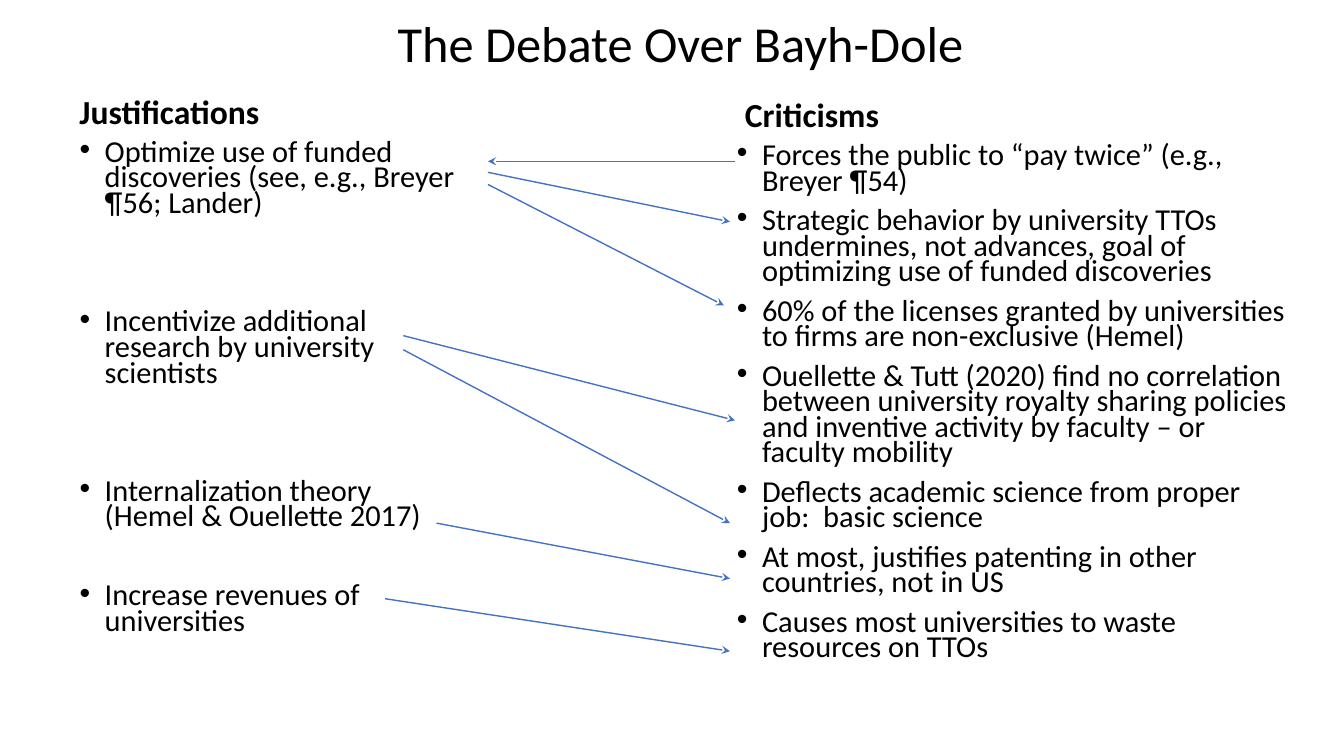
from lxml import etree
from pptx import Presentation
from pptx.dml.color import RGBColor
from pptx.enum.shapes import MSO_CONNECTOR
from pptx.enum.text import MSO_ANCHOR, PP_ALIGN
from pptx.oxml.ns import qn
from pptx.util import Inches, Pt

STRAIGHT = MSO_CONNECTOR.STRAIGHT
TOP, MIDDLE, BOTTOM = MSO_ANCHOR.TOP, MSO_ANCHOR.MIDDLE, MSO_ANCHOR.BOTTOM
LEFT, CENTER = PP_ALIGN.LEFT, PP_ALIGN.CENTER

COLORS = {"text": "000000", "arrow": "4472C4"}
FONT = "Calibri"
BULLET_SIZE = 21.7
BULLET_INDENT = 0.25
BULLET_GAP = 10
ROW_GAP = 28.2  # one line of bullet text plus its gap

# Each bullet: text, rows left open above it
JUSTIFICATIONS = [
    ("Optimize use of funded discoveries (see, e.g., Breyer ¶56; Lander)", 0),
    ("Incentivize additional research by university scientists", 2),
    ("Internalization theory (Hemel & Ouellette 2017)", 2),
    ("Increase revenues of universities", 1),
]
CRITICISMS = [
    ("Forces the public to “pay twice” (e.g., Breyer ¶54)", 0),
    ("Strategic behavior by university TTOs undermines, not advances, "
     "goal of optimizing use of funded discoveries", 0),
    ("60% of the licenses granted by universities to firms are "
     "non-exclusive (Hemel)", 0),
    ("Ouellette & Tutt (2020) find no correlation between university royalty "
     "sharing policies and inventive activity by faculty – or faculty mobility", 0),
    ("Deflects academic science from proper job:  basic science", 0),
    ("At most, justifies patenting in other countries, not in US", 0),
    ("Causes most universities to waste resources on TTOs", 0),
]

# Start x, start y, end x, end y
ARROWS = [
    (7.29, 1.6, 4.84, 1.6),
    (4, 3.33, 7.29, 4.17),
    (4.84, 1.83, 7.18, 3.03),
    (4, 3.47, 7.24, 5.19),
    (4.84, 1.71, 7.24, 2.2),
    (4.33, 5.19, 7.24, 5.74),
    (3.82, 5.94, 7.24, 6.46),
]


def add_box(page, place, anchor):
    box = page.shapes.add_textbox(*(Inches(length) for length in place))
    frame = box.text_frame
    frame.word_wrap = True
    frame.vertical_anchor = anchor
    return frame


def add_span(para, text, size, bold=False):
    span = para.add_run()
    span.text = text
    span.font.name = FONT
    span.font.size = Pt(size)
    span.font.bold = bold
    span.font.color.rgb = RGBColor.from_string(COLORS["text"])


def add_heading(page, place, text, size, anchor=BOTTOM, align=LEFT, bold=True):
    para = add_box(page, place, anchor).paragraphs[0]
    para.alignment = align
    para.line_spacing = 0.9
    add_span(para, text, size, bold)


def set_bullet(para):
    props = para._p.get_or_add_pPr()
    props.set("marL", str(Inches(BULLET_INDENT)))
    props.set("indent", str(-Inches(BULLET_INDENT)))
    etree.SubElement(props, qn("a:buFont")).set("typeface", "Arial")
    etree.SubElement(props, qn("a:buChar")).set("char", "•")


def add_bullets(page, place, bullets):
    frame = add_box(page, place, TOP)
    for index, (text, open_rows) in enumerate(bullets):
        para = frame.add_paragraph() if index else frame.paragraphs[0]
        set_bullet(para)
        para.line_spacing = 0.7
        if index:
            para.space_before = Pt(BULLET_GAP + open_rows * ROW_GAP)
        add_span(para, text, BULLET_SIZE)


def add_arrow(page, ends):
    arrow = page.shapes.add_connector(STRAIGHT, *(Inches(length) for length in ends))
    arrow.line.width = Pt(1)
    arrow.line.color.rgb = RGBColor.from_string(COLORS["arrow"])
    etree.SubElement(arrow.line._get_or_add_ln(), qn("a:tailEnd")).set("type", "stealth")
    etree.SubElement(arrow._element.spPr, qn("a:effectLst"))


def main():
    deck = Presentation()
    deck.slide_width, deck.slide_height = Inches(13.33), Inches(7.5)
    page = deck.slides.add_slide(deck.slide_layouts[6])

    # Title
    add_heading(page, (1, 0.01, 11.5, 0.9), "The Debate Over Bayh-Dole", 36,
                MIDDLE, CENTER, bold=False)

    # Two columns of arguments
    add_heading(page, (0.69, 0.46, 5.64, 0.9), "Justifications", 24)
    add_bullets(page, (0.69, 1.36, 4.01, 5.38), JUSTIFICATIONS)
    add_heading(page, (7.29, 0.49, 5.67, 0.9), "Criticisms", 24)
    add_bullets(page, (7.21, 1.39, 5.67, 5.59), CRITICISMS)

    # Arrows between arguments
    for ends in ARROWS:
        add_arrow(page, ends)

    deck.save("out.pptx")


if __name__ == "__main__":
    main()
